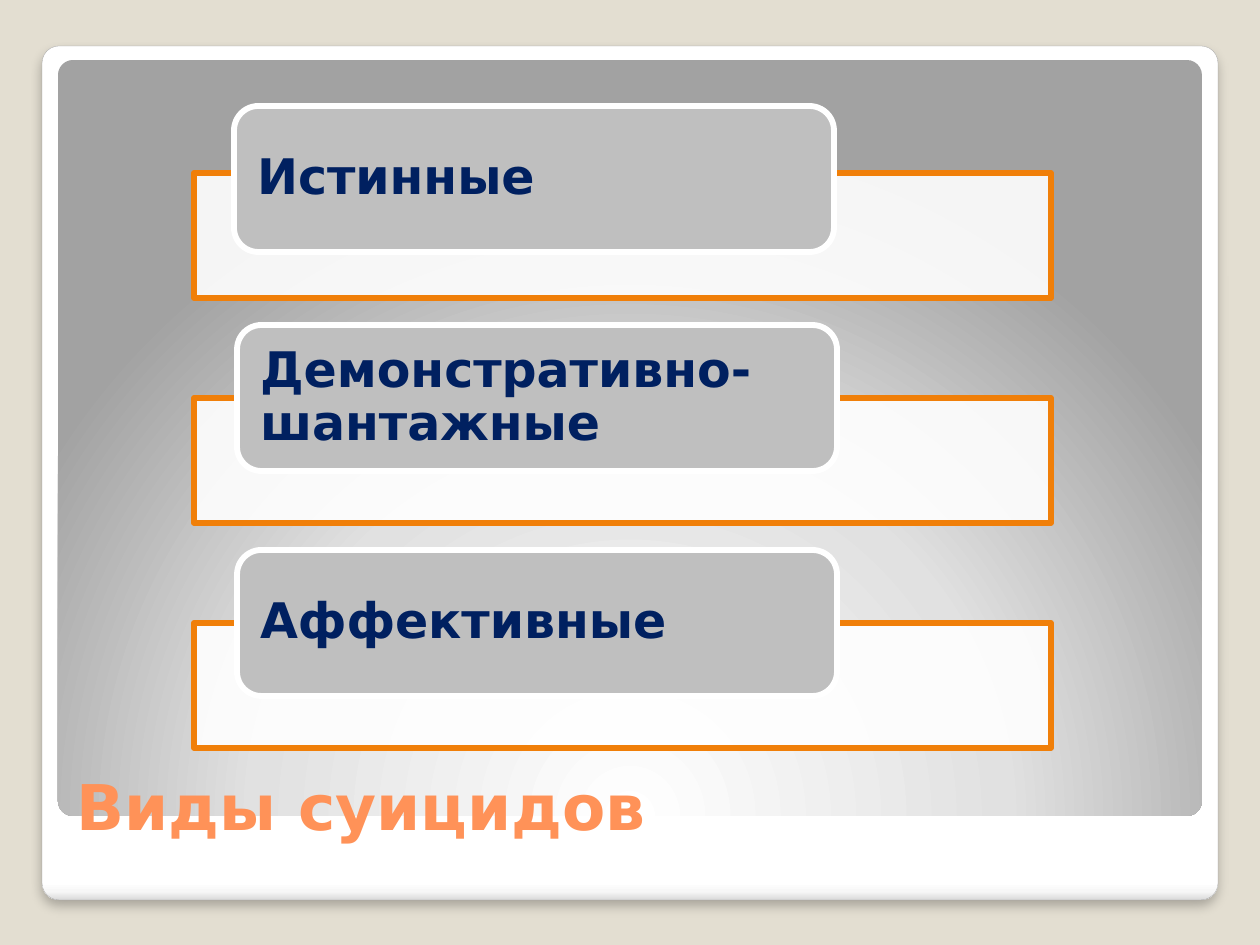
from lxml import etree
from pptx import Presentation
from pptx import util as u
from pptx.dml.color import RGBColor
from pptx.enum import shapes, text
from pptx.oxml.ns import qn

PX = u.Inches(1) / 126
FONT = "DejaVu Sans"
KINDS = ["Истинные", "Демонстративно-шантажные", "Аффективные"]


def px(length):
    return u.Emu(round(length * PX))


def rgb(value):
    return RGBColor.from_string(value)


def child(parent, tag, **attributes):
    values = {name: str(value) for name, value in attributes.items()}
    return etree.SubElement(parent, qn(tag), values)


def add_box(slide, box, preset, line=None, width=0, fill=None):
    shape = slide.shapes.add_shape(preset, *map(px, box))
    shape.shadow.inherit = False
    if fill:
        shape.fill.solid()
        shape.fill.fore_color.rgb = rgb(fill)
    if line:
        shape.line.color.rgb = rgb(line)
        shape.line.width = u.Pt(width)
    else:
        shape.line.fill.background()
    return shape


def set_gradient(shape, stops):
    """Fill with (percent, colour) stops and return the emptied gradient element."""
    shape.fill.gradient()
    gradient = shape.element.spPr.find(qn("a:gradFill"))
    for part in list(gradient):
        gradient.remove(part)
    stop_list = child(gradient, "a:gsLst")
    for percent, color in stops:
        stop = child(stop_list, "a:gs", pos=percent * 1000)
        child(stop, "a:srgbClr", val=color)
    return gradient


def format_text(frame, size, color):
    for paragraph in frame.paragraphs:
        paragraph.alignment = text.PP_ALIGN.LEFT
        for run in paragraph.runs:
            run.font.name = FONT
            run.font.size = u.Pt(size)
            run.font.bold = True
            run.font.color.rgb = rgb(color)


def add_frame(slide, box):
    """White card with a soft shadow and a grey panel glowing from below."""
    left, top, width, height = box
    rounded = shapes.MSO_SHAPE.ROUNDED_RECTANGLE
    card = add_box(slide, box, rounded, "A4A4A4", 0.16)
    card.adjustments[0] = 0.02
    gradient = set_gradient(card, [(0, "FFFFFF"), (98, "FFFFFF"), (99, "F7F7F7"), (100, "DADADA")])
    child(gradient, "a:lin", ang=5400000, scaled=0)
    effects = card.element.spPr.find(qn("a:effectLst"))
    shadow = child(effects, "a:outerShdw", blurRad=u.Pt(6), dist=u.Pt(4),
                   dir=5400000, algn="t", rotWithShape=0)
    child(child(shadow, "a:srgbClr", val="000000"), "a:alpha", val=25000)

    panel = add_box(slide, (left + 16, top + 14, width - 32, height - 98), rounded)
    panel.adjustments[0] = 0.02
    gradient = set_gradient(panel, [(0, "FFFFFF"), (55, "E1E1E1"), (100, "A2A2A2")])
    glow = child(gradient, "a:path", path="circle")
    child(glow, "a:fillToRect", l=50000, t=175000, r=50000, b=-75000)


def add_title(slide, box, wording):
    title = slide.shapes.title
    title.left, title.top, title.width, title.height = map(px, box)
    frame = title.text_frame
    frame.text = wording
    frame.word_wrap = True
    frame.vertical_anchor = text.MSO_ANCHOR.BOTTOM
    format_text(frame, 36, "FF9258")


def add_kind(slide, box, wording, label_left, label_top):
    """Outlined bar with a grey label that overlaps its upper edge."""
    left, top, width, height = box
    bar = add_box(slide, box, shapes.MSO_SHAPE.RECTANGLE, "F07F09", 3.35, "FFFFFF")
    bar_color = bar.element.spPr.find(qn("a:solidFill"))[0]
    child(bar_color, "a:alpha", val=90000)

    label = add_box(slide, (left + label_left, top + label_top, 600, 146),
                    shapes.MSO_SHAPE.ROUNDED_RECTANGLE, "FFFFFF", 3.35, "BFBFBF")
    frame = label.text_frame
    frame.text = wording
    frame.word_wrap = True
    frame.vertical_anchor = text.MSO_ANCHOR.MIDDLE
    frame.margin_left = frame.margin_right = px(16)
    frame.margin_top = frame.margin_bottom = 0
    frame.paragraphs[0].line_spacing = 0.9
    format_text(frame, 28, "002060")


def add_kinds(slide, box, pitch):
    left, top, width, height = box
    label_offsets = [(40, -67), (43, -73), (43, -73)]
    for row, (kind, offset) in enumerate(zip(KINDS, label_offsets)):
        add_kind(slide, (left, top + row * pitch, width, height), kind, *offset)


def main():
    prs = Presentation()
    prs.slide_width, prs.slide_height = u.Inches(10), u.Inches(7.5)
    slide = prs.slides.add_slide(prs.slide_layouts[5])
    slide.background.fill.solid()
    slide.background.fill.fore_color.rgb = rgb("E3DED1")

    add_frame(slide, (42, 46, 1176, 854))
    add_title(slide, (64, 770, 1128, 79), "Виды суицидов")
    # The title overlaps the panel, so it goes in front of the frame.
    slide.shapes.title.element.getparent().append(slide.shapes.title.element)
    add_kinds(slide, (194, 173, 857, 125), 225)
    prs.save("out.pptx")


if __name__ == "__main__":
    main()
